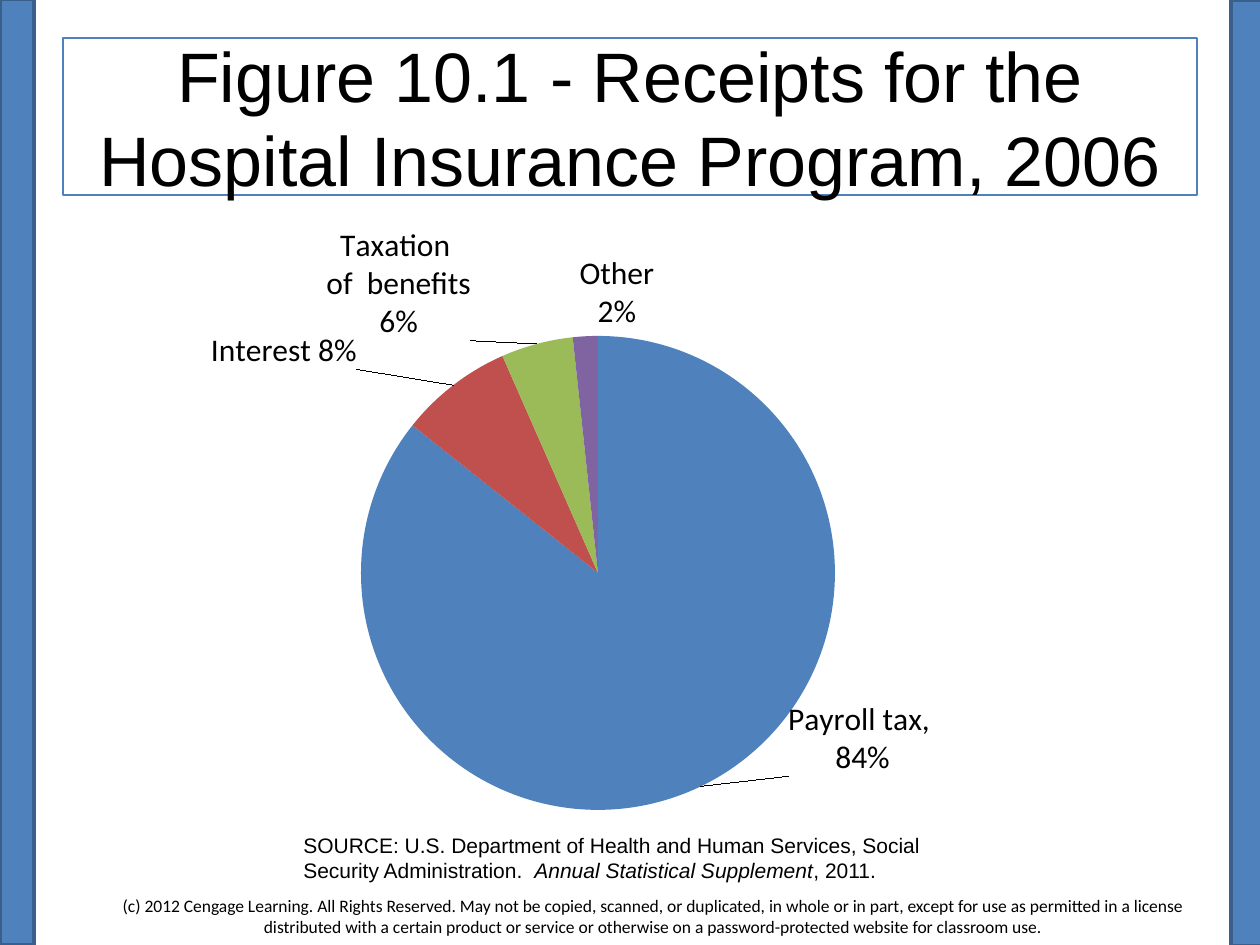
from dataclasses import dataclass

from lxml import etree
from pptx import Presentation, util as u
from pptx.chart.data import CategoryChartData
from pptx.dml.color import RGBColor
from pptx.enum import chart as ch, shapes, text
from pptx.oxml.ns import qn

TITLE = "Figure 10.1 - Receipts for the Hospital Insurance Program, 2006"
# category, share, label, colour, label offset in px
RECEIPTS = [
    ("Payroll tax", 0.857, "Payroll tax,  84%", "4F81BD", (84, -93)),
    ("Interest", 0.077, "Interest 8%", "C0504D", (-92, -10)),
    ("Taxation of benefits", 0.049, "Taxation \nof  benefits\n6%", "9BBB59", (-64, 4)),
    ("Other", 0.017, "Other\n2%", "8064A2", (32, 2)),
]
SOURCE = [
    [("SOURCE: U.S. Department of Health and Human Services, Social", False)],
    [("Security Administration.  ", False),
     ("Annual Statistical Supplement", True), (", 2011.", False)],
]
COPYRIGHT = (
    "(c) 2012 Cengage Learning. All Rights Reserved. May not be copied, scanned, "
    "or duplicated, in whole or in part, except for use as permitted in a license "
    "distributed with a certain product or service or otherwise on a "
    "password-protected website for classroom use."
)

PX = u.Inches(1) // 126
SLIDE = (1260, 945)
BARS = [(0, -1, 34, 946), (1231, 0, 34, 946)]
TITLE_BOX = (63, 38, 1134, 157)
CHART_BOX = (192, 207, 832, 699)
PIE_BOX = (169, 129, 474, 474)  # inside the chart
SOURCE_BOX = (291, 826, 654, 63)
COPYRIGHT_BOX = (74, 889, 1157, 55)


@dataclass(frozen=True)
class Theme:
    accent: str = "4F81BD"
    edge: str = "3A5F8C"
    ink: str = "000000"
    head: str = "Arial"
    body: str = "Calibri"
    title: int = 40
    label: int = 18
    source: int = 12
    small: int = 10


THEME = Theme()


def rgb(code):
    return RGBColor.from_string(code)


def emu(box):
    return [v * PX for v in box]


def style(font, name, size, italic=None):
    font.name, font.size, font.italic = name, u.Pt(size), italic
    font.color.rgb = rgb(THEME.ink)


def add_rect(s, box, fill, line, width):
    sp = s.shapes.add_shape(shapes.MSO_SHAPE.RECTANGLE, *emu(box))
    sp.shadow.inherit = False
    if fill:
        sp.fill.solid()
        sp.fill.fore_color.rgb = rgb(fill)
    else:
        sp.fill.background()
    sp.line.color.rgb = rgb(line)
    sp.line.width = u.Pt(width)
    return sp


def write(sp, paragraphs, name, size, align, wrap=True):
    tf = sp.text_frame
    tf.word_wrap = wrap
    for i, runs in enumerate(paragraphs):
        p = tf.add_paragraph() if i else tf.paragraphs[0]
        p.alignment = align
        for words, italic in runs:
            r = p.add_run()
            r.text = words
            style(r.font, name, size, italic)


def manual_layout(parent, index, px, **modes):
    """Place a chart element by px lengths, stored as fractions of the chart."""
    for old in parent.findall(qn("c:layout")):
        parent.remove(old)
    layout = etree.Element(qn("c:layout"))
    manual = etree.SubElement(layout, qn("c:manualLayout"))
    width, height = CHART_BOX[2:]
    fractions = {tag: v / whole
                 for tag, v, whole in zip("xywh", px, (width, height) * 2)}
    for tag, value in {**modes, **fractions}.items():
        etree.SubElement(manual, qn(f"c:{tag}")).set("val", str(value))
    parent.insert(index, layout)


def add_pie(s):
    data = CategoryChartData(number_format="0.00%")
    data.categories = [row[0] for row in RECEIPTS]
    data.add_series("Series 1", [row[1] for row in RECEIPTS])
    chart = s.shapes.add_chart(ch.XL_CHART_TYPE.PIE, *emu(CHART_BOX), data).chart
    chart.has_legend = chart.has_title = False
    style(chart.font, THEME.body, THEME.small)
    plot = chart.plots[0]
    plot.vary_by_categories = True
    series = plot.series[0]

    labels = series.data_labels
    labels.show_value = labels.show_category_name = True
    labels.number_format, labels.number_format_is_linked = "0.00%", False
    labels.position = ch.XL_LABEL_POSITION.OUTSIDE_END
    style(labels.font, THEME.body, THEME.label)

    for i, (_, _, label, colour, _) in enumerate(RECEIPTS):
        point = series.points[i]
        point.format.fill.solid()
        point.format.fill.fore_color.rgb = rgb(colour)
        tf = point.data_label.text_frame
        tf.text = label
        for p in tf.paragraphs:
            for r in p.runs:
                style(r.font, THEME.body, THEME.label)
        point.data_label.position = ch.XL_LABEL_POSITION.OUTSIDE_END

    root = chart.element
    for label, row in zip(root.iter(qn("c:dLbl")), RECEIPTS):
        label.find(qn("c:showCatName")).set("val", "1")
        manual_layout(label, 1, row[4])
    area = next(root.iter(qn("c:plotArea")))
    manual_layout(area, 0, PIE_BOX, layoutTarget="inner", xMode="edge", yMode="edge")


def main():
    prs = Presentation()
    prs.slide_width, prs.slide_height = emu(SLIDE)
    s = prs.slides.add_slide(prs.slide_layouts[6])
    center = text.PP_ALIGN.CENTER

    for box in BARS:
        add_rect(s, box, THEME.accent, THEME.edge, 2)
    sp = s.shapes.add_textbox(*emu(COPYRIGHT_BOX))
    write(sp, [[(COPYRIGHT, None)]], THEME.body, THEME.small, center)

    sp = add_rect(s, TITLE_BOX, None, THEME.accent, 0.75)
    sp.text_frame.vertical_anchor = text.MSO_ANCHOR.MIDDLE
    write(sp, [[(TITLE, None)]], THEME.head, THEME.title, center)

    add_pie(s)
    sp = s.shapes.add_textbox(*emu(SOURCE_BOX))
    write(sp, SOURCE, THEME.head, THEME.source, text.PP_ALIGN.LEFT, wrap=False)
    prs.save("out.pptx")


if __name__ == "__main__":
    main()
